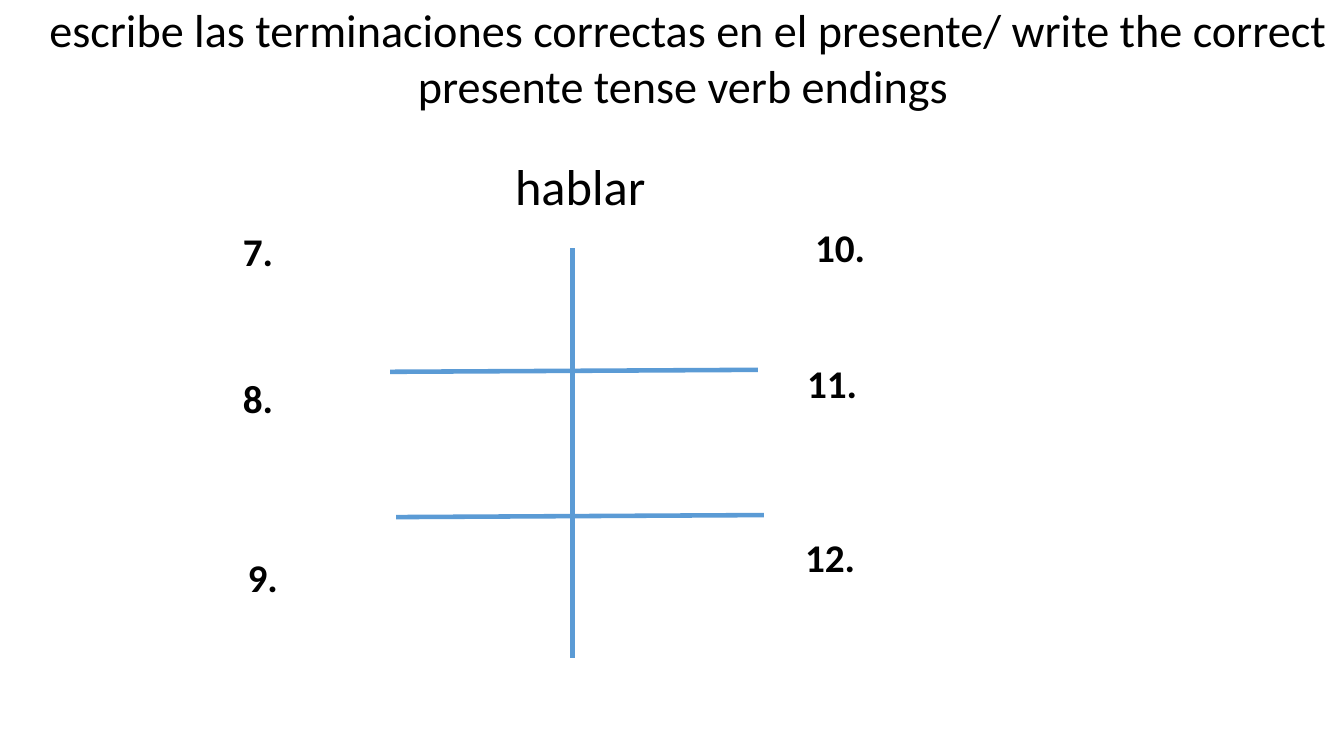
from pptx import Presentation
from pptx.dml.color import RGBColor
from pptx.enum.shapes import MSO_CONNECTOR
from pptx.enum.text import MSO_AUTO_SIZE, PP_ALIGN
from pptx.oxml.ns import qn
from pptx.util import Cm, Pt
from lxml import etree

STRAIGHT = MSO_CONNECTOR.STRAIGHT
GROW = MSO_AUTO_SIZE.SHAPE_TO_FIT_TEXT
LEFT, CENTER = PP_ALIGN.LEFT, PP_ALIGN.CENTER

# Content; positions in centimetres
INSTRUCTION = ("escribe las terminaciones correctas en el presente/ "
               "write the correct presente tense verb endings ")
VERB = "hablar"
FIRST_NUMBER = 7
ANSWER_SPOTS = [
    (5.87, 5.61), (5.87, 9.3), (5.99, 13.82),
    (20.29, 5.51), (20.09, 8.92), (20.04, 13.31),
]
ANSWER_SIZE = (1.8, 1.45)

DIVIDER_TOP, DIVIDER_BOTTOM, DIVIDER_X = 6.25, 16.59, 14.43
ROW_STARTS = [(9.83, 9.37), (9.98, 13.03)]
ROW_WIDTH, ROW_RISE = 9.27, 0.05

THEME = {
    "font": "Calibri",
    "text": RGBColor(0, 0, 0),
    "rule": RGBColor(0x5B, 0x9B, 0xD5),
    "divider_width": 3,
    "row_width": 3.25,
    "instruction_size": 33,
    "verb_size": 36,
    "answer_size": 28,
}


def add_rule(slide, start, end, width):
    ends = [Cm(value) for value in (*start, *end)]
    rule = slide.shapes.add_connector(STRAIGHT, *ends)
    rule.line.color.rgb = THEME["rule"]
    rule.line.width = Pt(width)
    etree.SubElement(rule._element.spPr, qn("a:effectLst"))


def add_label(slide, text, box, size, bold=False, align=LEFT, wrap=True):
    label = slide.shapes.add_textbox(*[Cm(value) for value in box])
    frame = label.text_frame
    frame.word_wrap = wrap
    frame.auto_size = GROW
    paragraph = frame.paragraphs[0]
    paragraph.alignment = align
    run = paragraph.add_run()
    run.text = text
    font_format = {"name": THEME["font"], "size": Pt(size), "bold": bold}
    for attribute, value in font_format.items():
        setattr(run.font, attribute, value)
    run.font.color.rgb = THEME["text"]


def main():
    deck = Presentation()
    deck.slide_width, deck.slide_height = Cm(33.87), Cm(19.05)
    slide = deck.slides.add_slide(deck.slide_layouts[6])

    add_rule(slide, (DIVIDER_X, DIVIDER_TOP), (DIVIDER_X, DIVIDER_BOTTOM),
             THEME["divider_width"])
    for x, y in ROW_STARTS:
        add_rule(slide, (x, y), (x + ROW_WIDTH, y - ROW_RISE),
                 THEME["row_width"])

    add_label(slide, VERB, (12.73, 3.78, 3.84, 1.8), THEME["verb_size"],
              wrap=False)
    for number, spot in enumerate(ANSWER_SPOTS, FIRST_NUMBER):
        add_label(slide, f"{number}.", spot + ANSWER_SIZE,
                  THEME["answer_size"], bold=True)
    add_label(slide, INSTRUCTION, (0.58, -0.08, 33.53, 3.07),
              THEME["instruction_size"], align=CENTER)

    deck.save("out.pptx")


if __name__ == "__main__":
    main()
